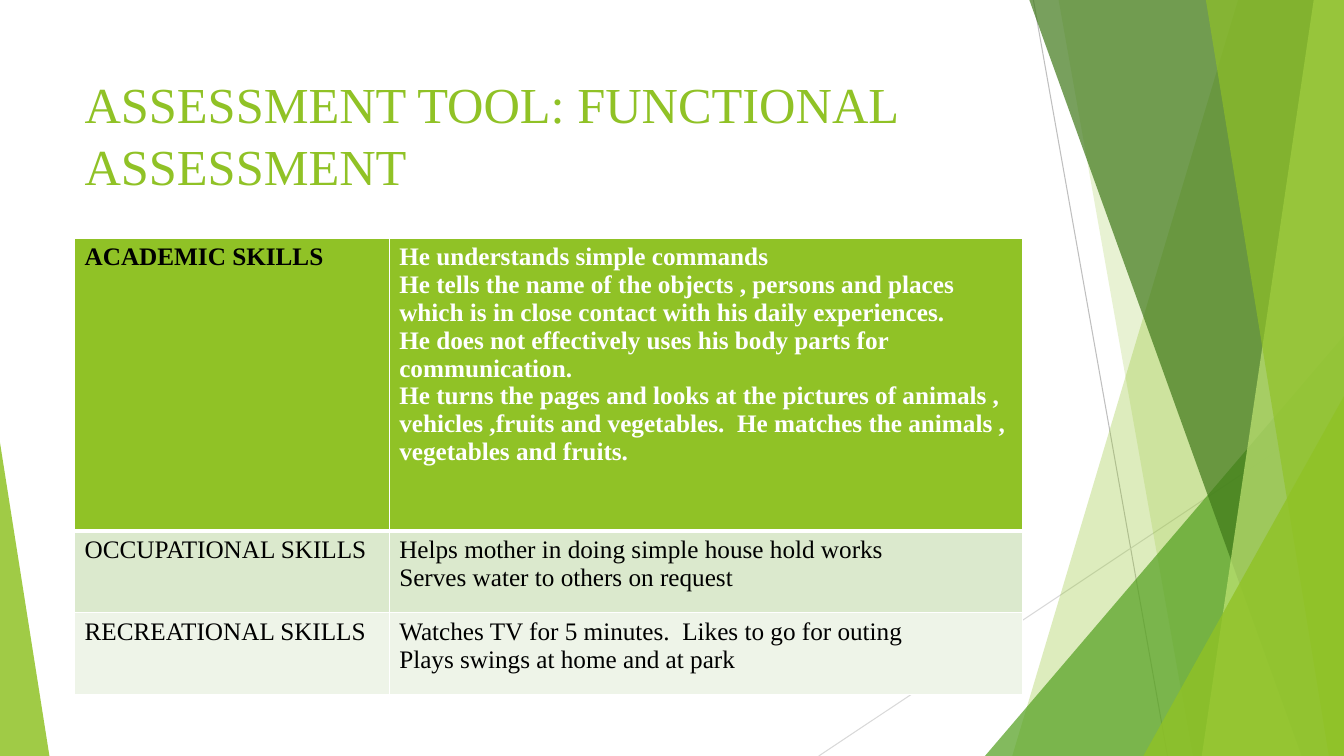
"""Build the functional assessment slide with its faceted green backdrop."""
from dataclasses import dataclass

from lxml import etree
from pptx import Presentation
from pptx.dml.color import RGBColor
from pptx.enum.shapes import MSO_CONNECTOR, MSO_SHAPE
from pptx.enum.text import MSO_ANCHOR, PP_ALIGN
from pptx.oxml.ns import qn
from pptx.util import Inches, Pt

STRAIGHT = MSO_CONNECTOR.STRAIGHT
TRIANGLE = MSO_SHAPE.ISOSCELES_TRIANGLE
TOP = MSO_ANCHOR.TOP
LEFT = PP_ALIGN.LEFT

WIDTH, HEIGHT = Inches(13.33), Inches(7.5)
FONT = "Times New Roman"

WHITE = RGBColor(0xFF, 0xFF, 0xFF)
BLACK = RGBColor(0x00, 0x00, 0x00)
LIME = RGBColor(0x90, 0xC2, 0x26)
PALE_LIME = RGBColor(0xC0, 0xE4, 0x74)
GREEN = RGBColor(0x54, 0xA0, 0x21)
FOREST = RGBColor(0x3F, 0x78, 0x19)
MIST = RGBColor(0xDB, 0xE9, 0xCD)
FROST = RGBColor(0xEE, 0xF4, 0xE8)
GREY = RGBColor(0xBF, 0xBF, 0xBF)
LIGHT_GREY = RGBColor(0xD9, 0xD9, 0xD9)


@dataclass(frozen=True)
class Ray:
    """Thin line between two points, in percent of the slide."""
    start: tuple[float, float]
    end: tuple[float, float]
    color: RGBColor


@dataclass(frozen=True)
class Band:
    """Full-height facet whose slanted left edge runs to the right margin."""
    top_x: float
    bottom_x: float
    color: RGBColor
    opacity: int


@dataclass(frozen=True)
class Corner:
    """Right triangle standing on the slide's bottom edge."""
    left: float
    top: float
    width: float
    apex: int
    color: RGBColor
    opacity: int


@dataclass(frozen=True)
class SkillRow:
    """One table row with its share of the height and its style."""
    skill: str
    findings: tuple[str, ...]
    height: float
    fill: RGBColor
    findings_color: RGBColor = BLACK
    bold: bool = False
    bottom_border: float = 1


RAYS = (
    Ray((76.89, 0), (86.87, 100), GREY),
    Ray((100, 53.73), (60.92, 100), LIGHT_GREY),
)
FACETS = (
    Band(92.12, 75.32, LIME, 30),
    Band(78.77, 88.75, LIME, 20),
    Corner(73.29, 44.4, 26.71, 1, GREEN, 72),
    Band(76.59, 96.85, FOREST, 70),
    Band(97.75, 89.42, PALE_LIME, 70),
    Band(89.72, 98.87, LIME, 65),
    Corner(85.07, 52.4, 14.93, 1, LIME, 80),
    Corner(0, 58.53, 3.68, 0, LIME, 85),
)
MARGIN, CONTENT_WIDTH = 5.55, 70.52
TITLE_TOP, TITLE_HEIGHT = 8.93, 19.2
TABLE_TOP = 31.47
COLUMN_WIDTHS = (23.41, 47.11)
SKILL_ROWS = (
    SkillRow("ACADEMIC SKILLS", (
        "He understands simple commands",
        "He tells the name of the objects , persons and places which is in "
        "close contact with his daily experiences.",
        "He does not effectively uses his body parts for communication.",
        "He turns the pages and looks at the pictures of animals , vehicles "
        ",fruits and vegetables.  He matches the animals , vegetables and fruits.",
    ), 38.8, LIME, WHITE, True, 3),
    SkillRow("OCCUPATIONAL SKILLS", (
        "Helps mother in doing simple house hold works",
        "Serves water to others on request",
    ), 10.8, MIST),
    SkillRow("RECREATIONAL SKILLS", (
        "Watches TV for 5 minutes.  Likes to go for outing",
        "Plays swings at home and at park",
    ), 10.8, FROST),
)


def across(percent: float) -> int:
    """Turn a share of the slide's width into a length."""
    return round(WIDTH * percent / 100)


def down(percent: float) -> int:
    """Turn a share of the slide's height into a length."""
    return round(HEIGHT * percent / 100)


def write_text(frame, lines, *, size, color, bold=False, spacing=None) -> None:
    """Fill a text frame with one paragraph per line."""
    frame.word_wrap = True
    for index, line in enumerate(lines):
        para = frame.paragraphs[0] if index == 0 else frame.add_paragraph()
        para.alignment = LEFT
        if spacing:
            para.line_spacing = Pt(spacing)
        span = para.add_run()
        span.text = line
        span.font.name = FONT
        span.font.size = Pt(size)
        span.font.bold = bold
        span.font.color.rgb = color


def draw_ray(page, ray: Ray) -> None:
    """Draw a thin line without a shadow."""
    line = page.shapes.add_connector(
        STRAIGHT, across(ray.start[0]), down(ray.start[1]),
        across(ray.end[0]), down(ray.end[1]))
    line.line.color.rgb = ray.color
    line.line.width = Pt(0.75)
    etree.SubElement(line._element.spPr, qn("a:effectLst"))


def draw_facet(page, facet: Band | Corner) -> None:
    """Draw a translucent band or corner triangle."""
    if isinstance(facet, Band):
        outline = page.shapes.build_freeform(across(facet.top_x), 0)
        outline.add_line_segments(
            [(WIDTH, 0), (WIDTH, HEIGHT), (across(facet.bottom_x), HEIGHT)])
        shape = outline.convert_to_shape()
    else:
        shape = page.shapes.add_shape(
            TRIANGLE, across(facet.left), down(facet.top),
            across(facet.width), down(100 - facet.top))
        shape.adjustments[0] = facet.apex
    shape.shadow.inherit = False
    shape.line.fill.background()
    shape.fill.solid()
    shape.fill.fore_color.rgb = facet.color
    color = shape._element.spPr.find(qn("a:solidFill"))[0]
    etree.SubElement(color, qn("a:alpha"), val=str(facet.opacity * 1000))


def set_borders(cell, widths: dict[str, float]) -> None:
    """Give a cell white borders of the given point widths."""
    properties = cell._tc.get_or_add_tcPr()
    for index, (side, width) in enumerate(widths.items()):
        border = etree.Element(qn(f"a:{side}"), w=str(Pt(width)))
        fill = etree.SubElement(border, qn("a:solidFill"))
        etree.SubElement(fill, qn("a:srgbClr"), val=str(WHITE))
        properties.insert(index, border)


def draw_title(page, title: str) -> None:
    """Place the slide's heading."""
    box = page.shapes.add_textbox(
        across(MARGIN), down(TITLE_TOP), across(CONTENT_WIDTH), down(TITLE_HEIGHT))
    box.text_frame.vertical_anchor = TOP
    write_text(box.text_frame, [title], size=36, color=LIME, spacing=44)


def draw_table(page, rows: tuple[SkillRow, ...]) -> None:
    """Place the table of skills and findings."""
    table = page.shapes.add_table(
        len(rows), len(COLUMN_WIDTHS), across(MARGIN), down(TABLE_TOP),
        across(CONTENT_WIDTH), down(sum(row.height for row in rows))).table
    table.horz_banding = False
    for column, width in zip(table.columns, COLUMN_WIDTHS):
        column.width = across(width)
    top_border = 1
    for index, row in enumerate(rows):
        table.rows[index].height = down(row.height)
        contents = (((row.skill,), BLACK), (row.findings, row.findings_color))
        for cell, (lines, color) in zip(table.rows[index].cells, contents):
            cell.fill.solid()
            cell.fill.fore_color.rgb = row.fill
            set_borders(cell, {"lnL": 1, "lnR": 1, "lnT": top_border,
                               "lnB": row.bottom_border})
            write_text(cell.text_frame, lines, size=18, color=color, bold=row.bold)
        top_border = row.bottom_border


def main() -> None:
    """Assemble and save the deck."""
    deck = Presentation()
    deck.slide_width, deck.slide_height = WIDTH, HEIGHT
    page = deck.slides.add_slide(deck.slide_layouts[6])
    for ray in RAYS:
        draw_ray(page, ray)
    for facet in FACETS:
        draw_facet(page, facet)
    draw_title(page, "ASSESSMENT TOOL: FUNCTIONAL ASSESSMENT")
    draw_table(page, SKILL_ROWS)
    deck.save("out.pptx")


if __name__ == "__main__":
    main()
